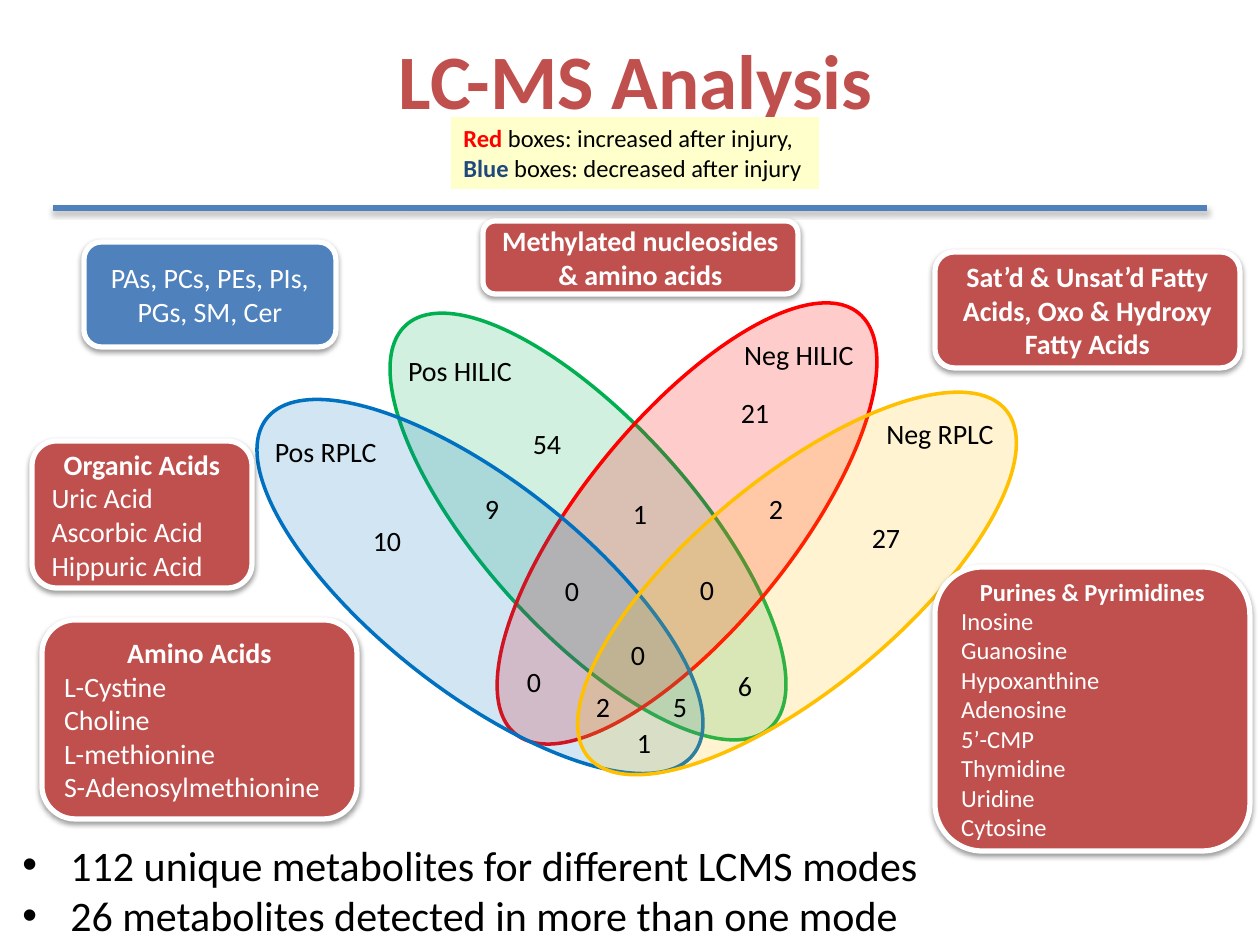
from lxml.etree import SubElement
from pptx import Presentation
from pptx.dml.color import RGBColor
from pptx.enum.shapes import MSO_CONNECTOR as Connector, MSO_SHAPE as Shape
from pptx.enum.text import MSO_ANCHOR as Anchor, MSO_AUTO_SIZE as AutoSize, PP_ALIGN as Align
from pptx.oxml.ns import qn
from pptx.util import Pt

SCALE = 914400 / 126
FONT = "Calibri"
BLACK = RGBColor(0x00, 0x00, 0x00)
WHITE = RGBColor(0xFF, 0xFF, 0xFF)
BRICK = RGBColor(0xC0, 0x50, 0x4D)
STEEL = RGBColor(0x4F, 0x81, 0xBD)
NAVY = RGBColor(0x1F, 0x49, 0x7D)
CREAM = RGBColor(0xFF, 0xFF, 0xCC)
GREEN = RGBColor(0x00, 0xB0, 0x50)
RED = RGBColor(0xFF, 0x00, 0x00)
BLUE = RGBColor(0x00, 0x70, 0xC0)
AMBER = RGBColor(0xFF, 0xC0, 0x00)

ELLIPSE_SIZE = (210, 543)
ELLIPSES = [
    (231, 3, 317.9, GREEN, 18),
    (330, 0, 39.2, RED, 20),
    (123, 63, 308.2, BLUE, 18),
    (440, 60, 50.3, AMBER, 18),
]
MODE_SIZE = (154, 55)
MODES = [
    ("Pos RPLC ", 0, 176),
    ("Neg HILIC", 470, 79),
    ("Pos HILIC", 131, 95),
    ("Neg RPLC", 611, 158),
]
COUNT_SIZE = (66, 53)
COUNTS = [
    ("6", 460, 410), ("0", 422, 314), ("2", 318, 431), ("0", 249, 406),
    ("2", 491, 233), ("1", 355, 238), ("1", 359, 467), ("0", 287, 315),
    ("9", 207, 233), ("54", 262, 168), ("10", 102, 265), ("21", 470, 137),
    ("27", 601, 262), ("5", 395, 431), ("0", 353, 379),
]
FINDINGS = [
    "112 unique metabolites for different LCMS modes",
    "26 metabolites detected in more than one mode",
]
CARDS = [
    ((84, 242, 252, 105), STEEL, 16, "", ["PAs, PCs, PEs, PIs, PGs, SM, Cer"], Align.CENTER),
    ((32, 441, 220, 147), BRICK, 16, "Organic Acids",
     ["Uric Acid", "Ascorbic Acid", "Hippuric Acid"], Align.JUSTIFY),
    ((42, 620, 315, 199), BRICK, 16, "Amino Acids",
     ["L-Cystine", "Choline", "L-methionine", "S-Adenosylmethionine"], Align.JUSTIFY),
    ((935, 567, 315, 284), BRICK, 14, "Purines & Pyrimidines",
     ["Inosine", "Guanosine", "Hypoxanthine", "Adenosine", "5’-CMP",
      "Thymidine", "Uridine", "Cytosine"], Align.JUSTIFY),
    ((483, 221, 315, 73), BRICK, 16, "Methylated nucleosides & amino acids", [], None),
    ((935, 252, 305, 116), BRICK, 16,
     "Sat’d & Unsat’d Fatty Acids, Oxo & Hydroxy Fatty Acids", [], None),
]


def px(length):
    return round(length * SCALE)


def place(box):
    return [px(length) for length in box]


def add_span(para, text, size, color, bold=False):
    span = para.add_run()
    span.text = text
    span.font.name = FONT
    span.font.size = Pt(size)
    span.font.color.rgb = color
    span.font.bold = bold


def add_paras(frame, count):
    return [frame.paragraphs[0]] + [frame.add_paragraph() for _ in range(count - 1)]


def add_text(shapes, box, text, size, color, bold=False, anchor=Anchor.TOP):
    frame = shapes.add_textbox(*place(box)).text_frame
    frame.word_wrap = True
    frame.vertical_anchor = anchor
    para = frame.paragraphs[0]
    para.alignment = Align.CENTER
    add_span(para, text, size, color, bold)


def add_shadow(shape, opacity, distance):
    effects = SubElement(shape._element.spPr, qn("a:effectLst"))
    shadow = SubElement(effects, qn("a:outerShdw"), blurRad=str(Pt(3.1)),
                        dist=str(Pt(distance)), dir="5400000", rotWithShape="0")
    color = SubElement(shadow, qn("a:srgbClr"), val=str(BLACK))
    SubElement(color, qn("a:alpha"), val=str(opacity * 1000))


def draw_header(page, box):
    left, top, width, height = box
    rule = page.shapes.add_connector(Connector.STRAIGHT, px(left), px(top + height),
                                     px(left + width), px(top + height))
    rule.line.color.rgb = STEEL
    rule.line.width = Pt(3)
    add_shadow(rule, 35, 1.8)
    add_text(page.shapes, (left + 126, top, 914, 158), "LC-MS Analysis", 44, BRICK, True, Anchor.MIDDLE)


def draw_venn(page, box):
    left, top = box[:2]
    group = page.shapes.add_group_shape()
    for x, y, angle, color, opacity in ELLIPSES:
        ellipse = group.shapes.add_shape(Shape.OVAL, *place((left + x, top + y, *ELLIPSE_SIZE)))
        ellipse.shadow.inherit = False
        ellipse.rotation = angle
        ellipse.fill.solid()
        ellipse.fill.fore_color.rgb = color
        fill_color = ellipse._element.spPr.find(qn("a:solidFill"))[0]
        SubElement(fill_color, qn("a:alpha"), val=str(opacity * 1000))
        ellipse.line.color.rgb = color
        ellipse.line.width = Pt(2)
    for labels, size in ((MODES, MODE_SIZE), (COUNTS, COUNT_SIZE)):
        for text, x, y in labels:
            add_text(group.shapes, (left + x, top + y, *size), text, 16, BLACK)


def draw_findings(page, box):
    frame = page.shapes.add_textbox(*place(box)).text_frame
    frame.word_wrap = True
    frame.auto_size = AutoSize.SHAPE_TO_FIT_TEXT
    for para, text in zip(add_paras(frame, len(FINDINGS)), FINDINGS):
        layout = para._p.get_or_add_pPr()
        layout.set("marL", str(px(48)))
        layout.set("indent", str(-px(48)))
        SubElement(layout, qn("a:buFont"), typeface="Arial")
        SubElement(layout, qn("a:buChar"), char="•")
        add_span(para, text, 24, BLACK)


def draw_card(page, box, color, size, heading, items, item_align):
    card = page.shapes.add_shape(Shape.ROUNDED_RECTANGLE, *place(box))
    card.fill.solid()
    card.fill.fore_color.rgb = color
    card.line.color.rgb = WHITE
    card.line.width = Pt(3)
    add_shadow(card, 38, 1.6)
    frame = card.text_frame
    frame.word_wrap = True
    frame.vertical_anchor = Anchor.MIDDLE
    lines = [(heading, True, Align.CENTER)] if heading else []
    lines += [(item, False, item_align) for item in items]
    for para, (text, bold, align) in zip(add_paras(frame, len(lines)), lines):
        para.alignment = align
        add_span(para, text, size, WHITE, bold)


def draw_legend(page, box):
    legend = page.shapes.add_textbox(*place(box))
    legend.fill.solid()
    legend.fill.fore_color.rgb = CREAM
    frame = legend.text_frame
    frame.word_wrap = True
    frame.auto_size = AutoSize.SHAPE_TO_FIT_TEXT
    entries = [("Red", RED, " boxes: increased after injury,"),
               ("Blue", NAVY, " boxes: decreased after injury")]
    for para, (name, color, meaning) in zip(add_paras(frame, len(entries)), entries):
        add_span(para, name, 14, color, True)
        add_span(para, meaning, 14, BLACK)


def main():
    deck = Presentation()
    deck.slide_width, deck.slide_height = px(1260), px(945)
    page = deck.slides.add_slide(deck.slide_layouts[6])
    draw_header(page, (53, 0, 1154, 208))
    draw_venn(page, (252, 252, 765, 606))
    draw_findings(page, (10, 833, 924, 115))
    for card in CARDS:
        draw_card(page, *card)
    draw_legend(page, (451, 117, 368, 72))
    deck.save("out.pptx")


if __name__ == "__main__":
    main()
